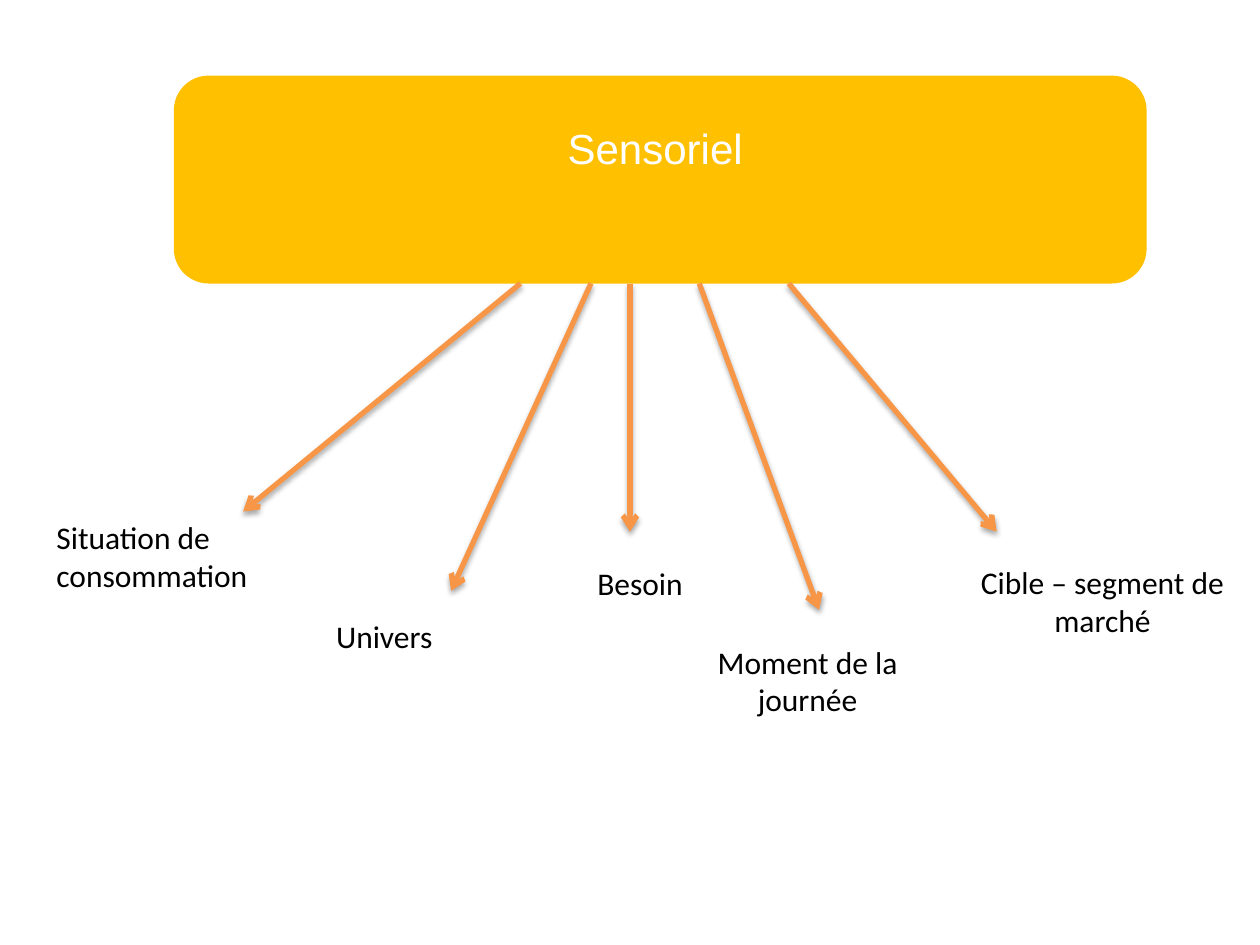
"""Build a slide where one sensory theme points to five usage themes."""
from dataclasses import dataclass

from lxml.etree import SubElement
from pptx import Presentation
from pptx.dml.color import RGBColor
from pptx.enum.shapes import MSO_CONNECTOR, MSO_SHAPE
from pptx.enum.text import MSO_ANCHOR, MSO_AUTO_SIZE, PP_ALIGN
from pptx.oxml.ns import qn
from pptx.shapes.base import BaseShape
from pptx.slide import Slide
from pptx.util import Inches, Pt

COLORS = {"card": "FFC000", "arrow": "F79646", "title": "FFFFFF",
          "text": "000000", "shadow": "000000"}
BASE = 2.25
WIDTH = 2.36


@dataclass
class Branch:
    """Arrow start, arrow tip and label of one theme."""
    start: float
    tip: tuple[float, float]
    text: str
    left: float
    top: float
    high: float = 0.4
    align: PP_ALIGN = PP_ALIGN.CENTER


BRANCHES = [
    Branch(4.13, (1.93, 4.06), "Situation de consommation", 0.35, 4.06, 0.71, PP_ALIGN.LEFT),
    Branch(4.69, (3.58, 4.69), "Univers", 1.87, 4.85),
    Branch(5, (5, 4.22), "Besoin", 3.9, 4.43),
    Branch(5.55, (6.5, 4.84), "Moment de la journée", 5.23, 5.05, 0.71),
    Branch(6.26, (7.91, 4.22), "Cible – segment de marché", 7.57, 4.42, 0.71),
]


def color(name: str) -> RGBColor:
    """Look up a named colour."""
    return RGBColor.from_string(COLORS[name])


def write(shape: BaseShape, text: str, font: str, size: int, tone: str,
          align: PP_ALIGN) -> None:
    """Fill a text shape with one formatted run."""
    frame = shape.text_frame
    frame.word_wrap = True
    frame.auto_size = MSO_AUTO_SIZE.SHAPE_TO_FIT_TEXT
    frame.vertical_anchor = MSO_ANCHOR.TOP
    para = frame.paragraphs[0]
    para.alignment = align
    run = para.add_run()
    run.text = text
    run.font.name = font
    run.font.size = Pt(size)
    run.font.color.rgb = color(tone)


def head(slide: Slide) -> None:
    """Draw the card with the slide title on top of it."""
    card = slide.shapes.add_shape(MSO_SHAPE.ROUNDED_RECTANGLE, Inches(1.38),
                                  Inches(0.6), Inches(7.72), Inches(1.65))
    card.shadow.inherit = False
    card.fill.solid()
    card.fill.fore_color.rgb = color("card")
    card.line.fill.background()
    title = slide.shapes.title
    title.left, title.top = Inches(2.09), Inches(0.92)
    title.width, title.height = Inches(6.22), Inches(0.5)
    write(title, "Sensoriel", "Arial", 24, "title", PP_ALIGN.CENTER)
    card.element.addnext(title.element)


def arrow(slide: Slide, branch: Branch) -> None:
    """Draw a shadowed arrow from the card to the tip."""
    line = slide.shapes.add_connector(
        MSO_CONNECTOR.STRAIGHT, Inches(branch.start), Inches(BASE),
        *map(Inches, branch.tip))
    line.line.color.rgb = color("arrow")
    line.line.width = Pt(3)
    SubElement(line.line._get_or_add_ln(), qn("a:tailEnd"), type="arrow")
    effects = SubElement(line.element.spPr, qn("a:effectLst"))
    shade = SubElement(effects, qn("a:outerShdw"), blurRad=str(Pt(3.1)),
                       dist=str(Pt(1.8)), dir="5400000", rotWithShape="0")
    tone = SubElement(shade, qn("a:srgbClr"), val=COLORS["shadow"])
    SubElement(tone, qn("a:alpha"), val="35000")


def label(slide: Slide, branch: Branch) -> None:
    """Draw the name of a theme."""
    box = slide.shapes.add_textbox(Inches(branch.left), Inches(branch.top),
                                   Inches(WIDTH), Inches(branch.high))
    write(box, branch.text, "Calibri", 18, "text", branch.align)


def main() -> None:
    """Build and save the deck."""
    deck = Presentation()
    deck.slide_width, deck.slide_height = Inches(10), Inches(7.5)
    slide = deck.slides.add_slide(deck.slide_layouts.get_by_name("Title Only"))
    head(slide)
    for draw in (arrow, label):
        for branch in BRANCHES:
            draw(slide, branch)
    deck.save("out.pptx")


if __name__ == "__main__":
    main()
